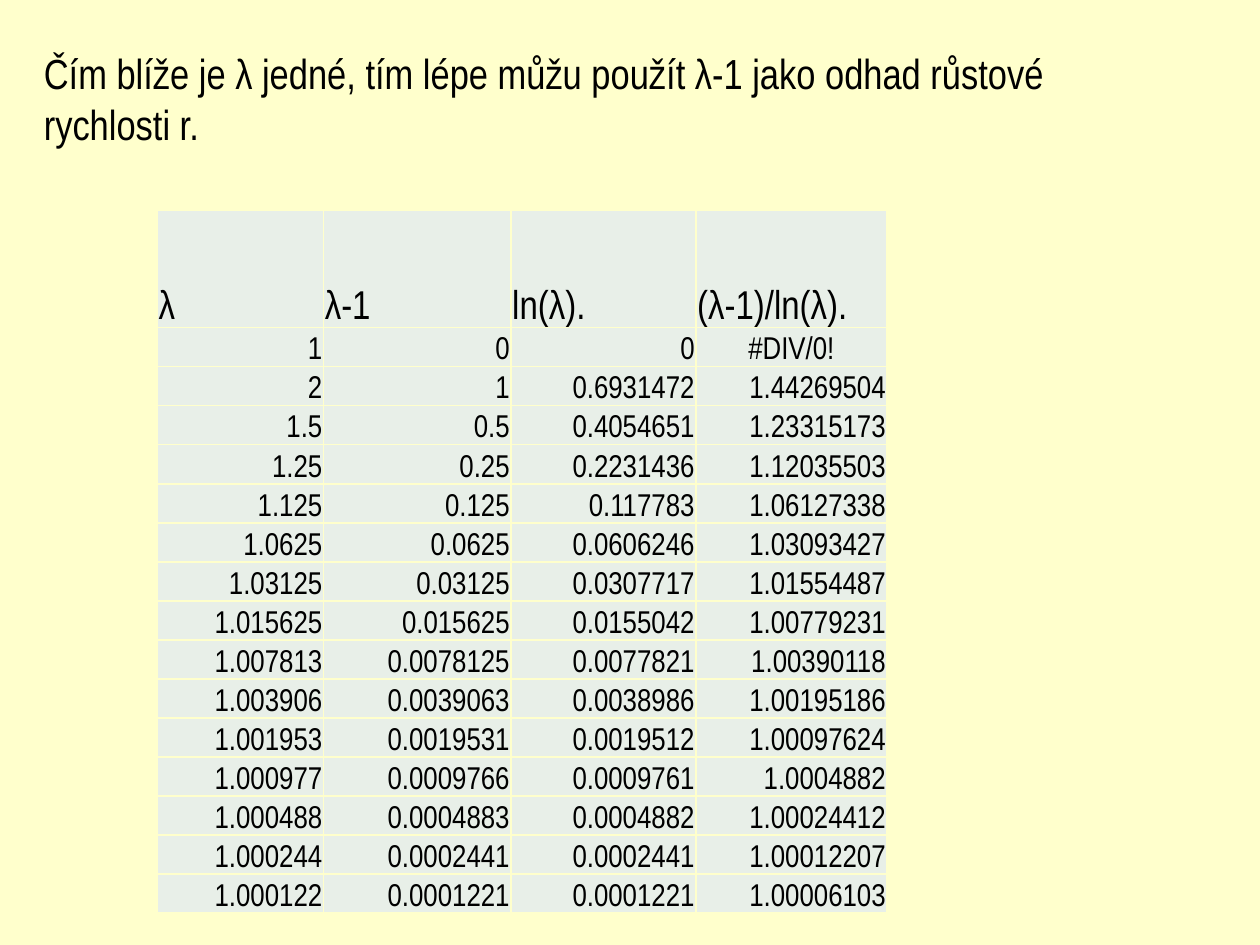
import dataclasses

import lxml.etree
import pptx
import pptx.dml.color
import pptx.enum.text
import pptx.oxml.ns
import pptx.util

Inches = pptx.util.Inches
Align = pptx.enum.text.PP_ALIGN


@dataclasses.dataclass(frozen=True)
class Theme:
    font: str = "Arial Narrow"
    background: str = "FFFFCC"
    cell: str = "E8EFE8"
    text: str = "000000"
    statement_size: int = 24
    header_size: int = 23
    value_size: int = 18
    border_width: int = 1


THEME = Theme()

STATEMENT = "Čím blíže je λ jedné, tím lépe můžu použít λ-1 jako odhad růstové rychlosti r."
HEADERS = ("λ", "λ-1", "ln(λ).", "(λ-1)/ln(λ).")
VALUES = (
    ("1", "0", "0", "#DIV/0!"),
    ("2", "1", "0.6931472", "1.44269504"),
    ("1.5", "0.5", "0.4054651", "1.23315173"),
    ("1.25", "0.25", "0.2231436", "1.12035503"),
    ("1.125", "0.125", "0.117783", "1.06127338"),
    ("1.0625", "0.0625", "0.0606246", "1.03093427"),
    ("1.03125", "0.03125", "0.0307717", "1.01554487"),
    ("1.015625", "0.015625", "0.0155042", "1.00779231"),
    ("1.007813", "0.0078125", "0.0077821", "1.00390118"),
    ("1.003906", "0.0039063", "0.0038986", "1.00195186"),
    ("1.001953", "0.0019531", "0.0019512", "1.00097624"),
    ("1.000977", "0.0009766", "0.0009761", "1.0004882"),
    ("1.000488", "0.0004883", "0.0004882", "1.00024412"),
    ("1.000244", "0.0002441", "0.0002441", "1.00012207"),
    ("1.000122", "0.0001221", "0.0001221", "1.00006103"),
)
COLUMN_WIDTHS = (1.32, 1.49, 1.47, 1.52)
HEADER_HEIGHT = 0.93


def color(value):
    return pptx.dml.color.RGBColor.from_string(value)


def add_text(paragraph, text, size, alignment=Align.LEFT):
    paragraph.alignment = alignment
    run = paragraph.add_run()
    run.text = text
    run.font.name = THEME.font
    run.font.size = pptx.util.Pt(size)
    run.font.color.rgb = color(THEME.text)


def set_borders(cell):
    properties = cell._tc.get_or_add_tcPr()
    qualified = pptx.oxml.ns.qn
    for index, side in enumerate(("a:lnL", "a:lnR", "a:lnT", "a:lnB")):
        line = lxml.etree.Element(qualified(side), w=str(pptx.util.Pt(THEME.border_width)))
        fill = lxml.etree.SubElement(line, qualified("a:solidFill"))
        lxml.etree.SubElement(fill, qualified("a:srgbClr"), val=THEME.background)
        properties.insert(index, line)


def fill_cell(cell, text, size, alignment):
    cell.margin_left = cell.margin_right = cell.margin_top = Inches(0.01)
    cell.margin_bottom = 0
    cell.vertical_anchor = pptx.enum.text.MSO_ANCHOR.BOTTOM
    cell.fill.solid()
    cell.fill.fore_color.rgb = color(THEME.cell)
    set_borders(cell)
    add_text(cell.text_frame.paragraphs[0], text, size, alignment)


def value_alignment(text):
    return Align.CENTER if text.startswith("#") else Align.RIGHT


def add_statement(slide, left, top, width, height):
    shape = slide.shapes.add_textbox(Inches(left), Inches(top), Inches(width), Inches(height))
    shape.text_frame.word_wrap = True
    add_text(shape.text_frame.paragraphs[0], STATEMENT, THEME.statement_size)


def add_growth_table(slide, left, top, width, height):
    shape = slide.shapes.add_table(
        len(VALUES) + 1, len(HEADERS), Inches(left), Inches(top), Inches(width), Inches(height)
    )
    table = shape.table
    table.first_row = False
    table.horz_banding = False
    for column, share in zip(table.columns, COLUMN_WIDTHS):
        column.width = Inches(width * share / sum(COLUMN_WIDTHS))
    for row in table.rows:
        row.height = Inches((height - HEADER_HEIGHT) / len(VALUES))
    table.rows[0].height = Inches(HEADER_HEIGHT)

    for column_index, header in enumerate(HEADERS):
        fill_cell(table.cell(0, column_index), header, THEME.header_size, Align.LEFT)
    for row_index, values in enumerate(VALUES, start=1):
        for column_index, value in enumerate(values):
            cell = table.cell(row_index, column_index)
            fill_cell(cell, value, THEME.value_size, value_alignment(value))


def main():
    presentation = pptx.Presentation()
    presentation.slide_width = Inches(10)
    presentation.slide_height = Inches(7.5)
    slide = presentation.slides.add_slide(presentation.slide_layouts[6])
    slide.background.fill.solid()
    slide.background.fill.fore_color.rgb = color(THEME.background)
    add_growth_table(slide, 1.25, 1.67, 5.79, 5.58)
    add_statement(slide, 0.25, 0.33, 9.17, 0.91)
    presentation.save("out.pptx")


if __name__ == "__main__":
    main()
